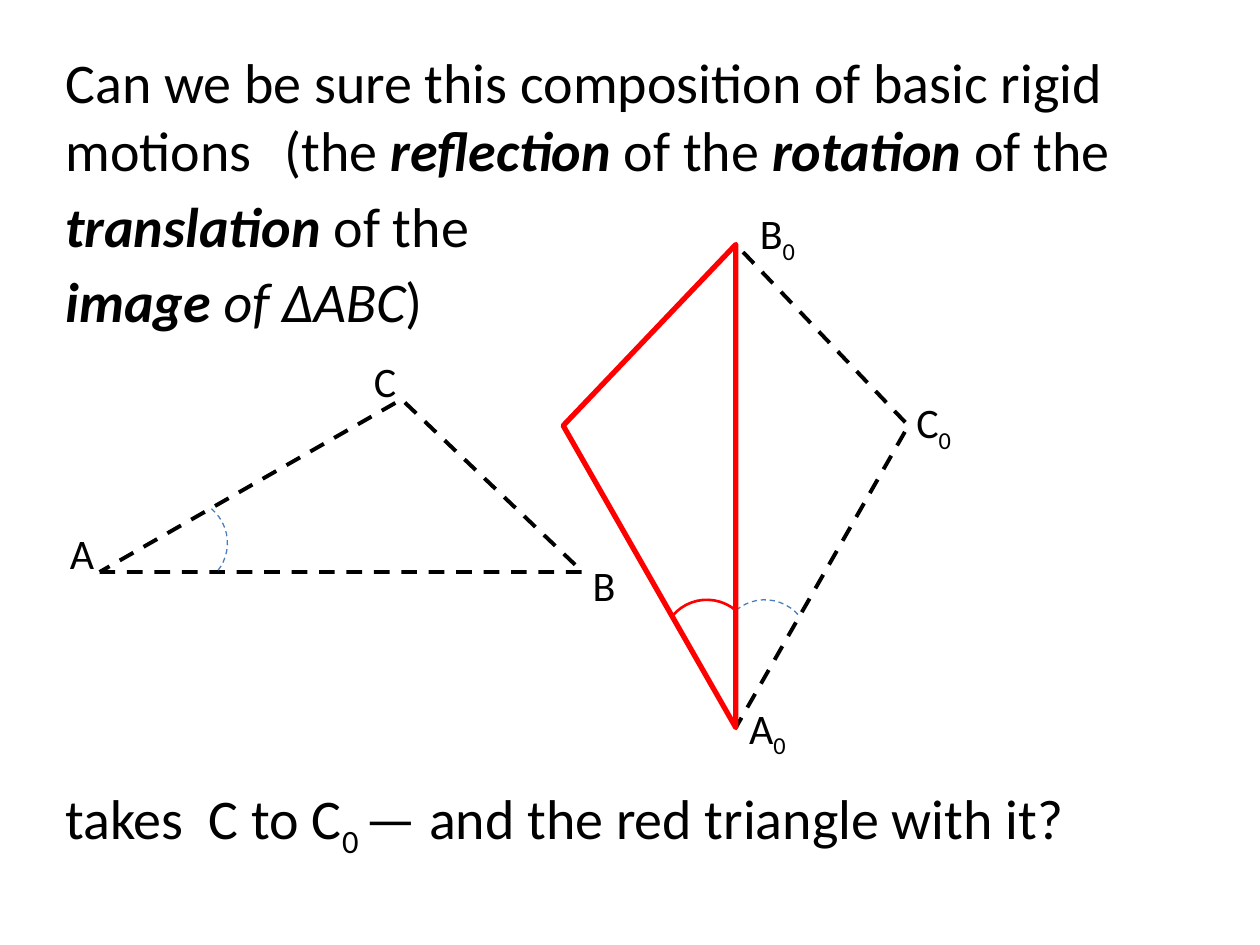
from collections import namedtuple
from pptx import Presentation
from pptx.dml.color import RGBColor
from pptx.enum.dml import MSO_LINE
from pptx.enum.shapes import MSO_SHAPE
from pptx.enum.text import MSO_ANCHOR, MSO_AUTO_SIZE, PP_ALIGN
from pptx.util import Inches, Pt

ARC, DASH = MSO_SHAPE.ARC, MSO_LINE.DASH
LEFT, MID = PP_ALIGN.LEFT, PP_ALIGN.CENTER
TOP, GROW = MSO_ANCHOR.TOP, MSO_AUTO_SIZE.SHAPE_TO_FIT_TEXT

Box = namedtuple("Box", "x y w h")
Pen = namedtuple("Pen", "color width dash")
Theme = namedtuple("Theme", "font ink body label side angle move")

COLS, ROWS = 100, 75
CELL = Inches(10) // COLS
THEME = Theme(
    font="Calibri",
    ink=RGBColor(0, 0, 0),
    body=Pt(32),
    label=Pt(24),
    side=Pen(RGBColor(0, 0, 0), Pt(2.25), DASH),
    angle=Pen(RGBColor(0x4B, 0x7E, 0xBC), Pt(0.75), DASH),
    move=Pen(RGBColor(255, 0, 0), Pt(3), None),
)
STRONG = {"bold": True, "italic": True}
SLANT = {"italic": True}
LOW = "-25000"
ARM, TAG = 7.1, (7.5, 5)


def cells(*nums):
    """Turn grid cells into slide units."""
    return [round(num * CELL) for num in nums]


def apply(item, **values):
    """Set each named attribute on an item."""
    for name, value in values.items():
        setattr(item, name, value)


def write(shape, box, runs, size, align=LEFT):
    """Fit a text shape to its box and fill it with styled runs."""
    left, top, width, height = cells(*box)
    apply(shape, left=left, top=top, width=width, height=height)
    frame = shape.text_frame
    apply(frame, word_wrap=True, auto_size=GROW, vertical_anchor=TOP)
    para = frame.paragraphs[0]
    para.alignment = align
    for text, look in runs:
        run = para.add_run()
        run.text = text
        apply(run.font, name=THEME.font, size=size)
        run.font.color.rgb = THEME.ink
        if look == LOW:
            run._r.get_or_add_rPr().set("baseline", LOW)
        else:
            apply(run.font, **look)


def add_text(slide, box, runs, size=THEME.body, align=LEFT):
    """Add a text box on the slide."""
    write(slide.shapes.add_textbox(0, 0, 0, 0), box, runs, size, align)


def draw(shape, pen):
    """Outline a shape with a pen, with no fill."""
    shape.shadow.inherit = False
    shape.fill.background()
    shape.line.color.rgb = pen.color
    apply(shape.line, width=pen.width, dash_style=pen.dash)


def add_figure(slide, box, shares, pen, arc, turn, arc_pen, tags=()):
    """Draw a triangle in a box, its angle arc and its corner labels."""
    spots = [(box.x + box.w * u, box.y + box.h * v) for u, v in shares]
    group = slide.shapes.add_group_shape().shapes
    first, *rest = [cells(*spot) for spot in spots]
    path = group.build_freeform(*first)
    path.add_line_segments(rest, close=True)
    draw(path.convert_to_shape(), pen)
    x, y = spots[0]
    place = cells(x + arc[0] - ARM / 2, y + arc[1] - ARM / 2, ARM, ARM)
    curve = group.add_shape(ARC, *place)
    curve.rotation = turn
    draw(curve, arc_pen)
    wide, high = TAG
    for (x, y), (runs, dx, dy) in zip(spots, tags):
        spot = Box(x + dx - wide / 2, y + dy - high / 2, wide, high)
        add_text(slide, spot, runs, THEME.label, MID)


def add_figures(slide, box):
    """Draw the flat triangle, its standing image and the red mirror."""
    long, tall = 38.35, 13.7
    axis = box.x + 50.5
    flat = [(0, 1), (1, 1), (0.625, 0)]
    stand = [(0, 1), (0, 0), (1, 0.375)]
    mirror = [(1 - u, v) for u, v in stand]
    zero = ("0", LOW)
    plain = [([("A", {})], -1.4, -1.5), ([("B", {})], 1.7, 1),
             ([("C", {})], -1.3, -1.5)]
    moved = [([("A", {}), zero], 2.5, 0), ([("B", {}), zero], 3.3, -0.9),
             ([("C", {}), zero], 2, -0.3)]
    add_figure(slide, Box(box.x, box.y + 12.3, long, tall), flat,
               THEME.side, (6.6, -2.3), 39.9, THEME.angle, plain)
    add_figure(slide, Box(axis, box.y, tall, long), stand,
               THEME.side, (2.3, -6.6), 320.1, THEME.angle, moved)
    add_figure(slide, Box(axis - tall, box.y, tall, long), mirror,
               THEME.move, (-2.3, -6.6), 309.9,
               THEME.move._replace(width=Pt(1.5)))


def add_question(slide, box):
    """Place the title, the lines that go on from it and the close."""
    line = 6.4
    title = "Can we be sure this composition of basic rigid motions"
    write(slide.shapes.title, box._replace(h=11.8), [(title, {})], THEME.body)
    add_text(slide, Box(box.x + 17.4, box.y + 5.4, 69.5, line), [
        ("(the ", {}), ("reflection", STRONG), (" of the ", {}),
        ("rotation", STRONG), (" of the", {})])
    tails = [[("translation", STRONG), (" of the", {})],
             [("image ", STRONG), ("of ΔABC", SLANT), (")", {})]]
    for row, runs in enumerate(tails):
        top = box.y + 11.4 + 6 * row
        add_text(slide, Box(box.x, top, 35.7, line), runs)
    add_text(slide, Box(box.x, box.y + box.h - line, box.w, line), [
        ("takes  C to C", {}), ("0 ", LOW),
        ("— and the red triangle with it?", {})])


def main():
    """Build the slide and save it."""
    deck = Presentation()
    deck.slide_width, deck.slide_height = cells(COLS, ROWS)
    slide = deck.slides.add_slide(deck.slide_layouts[5])
    add_figures(slide, Box(7.9, 19.4, 64.2, 38.35))
    add_question(slide, Box(4.2, 3.3, 90, 64.8))
    deck.save("out.pptx")


if __name__ == "__main__":
    main()
